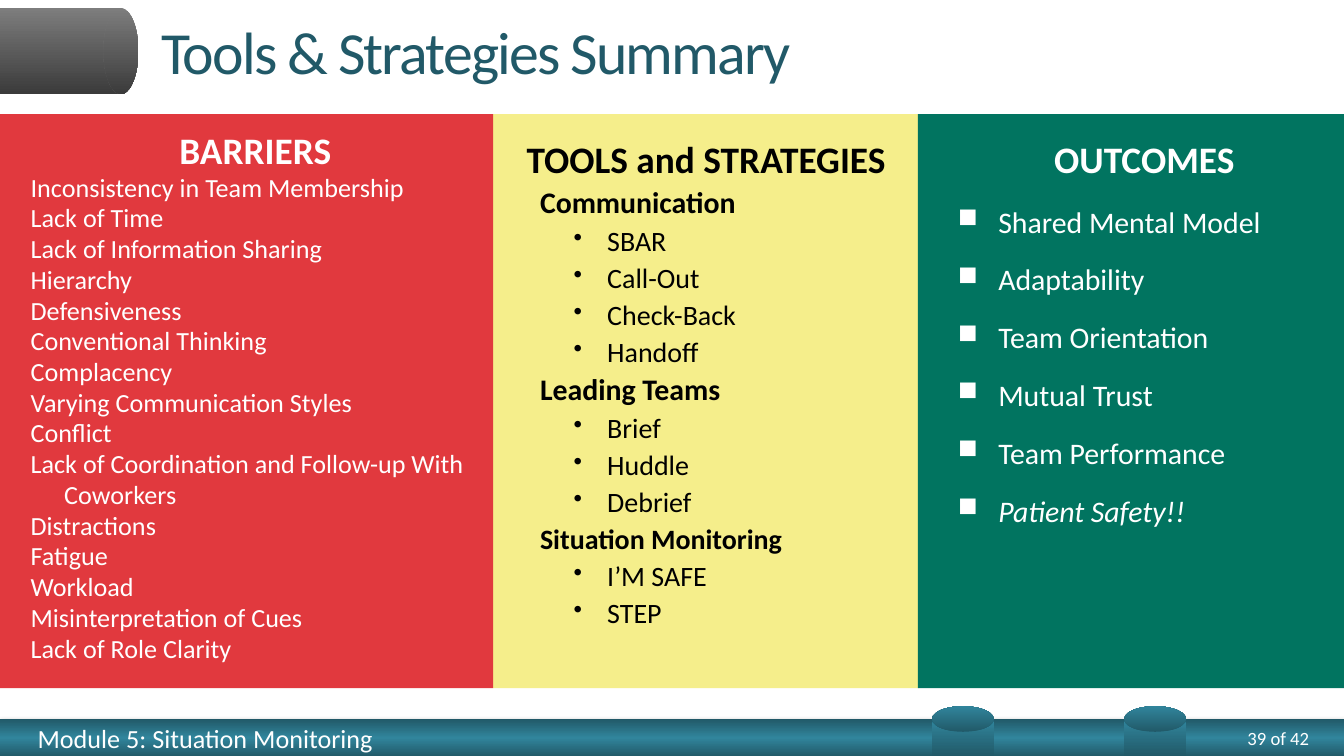
"""Build the Tools & Strategies Summary slide."""
from dataclasses import dataclass

from lxml.etree import SubElement
from pptx import Presentation
from pptx.dml.color import RGBColor
from pptx.enum.shapes import MSO_SHAPE
from pptx.enum.text import MSO_ANCHOR, PP_ALIGN
from pptx.oxml.ns import qn
from pptx.util import Inches, Pt


@dataclass(frozen=True)
class Theme:
    font: str = "Calibri"
    white: str = "FFFFFF"
    black: str = "000000"
    dark_teal: str = "215968"
    teal: str = "31859C"
    light_grey: str = "7D7D7D"
    dark_grey: str = "3B3B3B"
    red: str = "E1393E"
    yellow: str = "F5EE8B"
    green: str = "017460"
    title: int = 32
    heading: int = 20
    body: int = 16
    item: int = 15
    small: int = 14
    number: int = 10


def write(tf, text, size, color, font, bold=False, italic=False, align=PP_ALIGN.LEFT,
          margin=0, indent=0, leading=1.0, before=0, bullet=None, tracking=None):
    p = tf.paragraphs[0]
    if p.runs:
        p = tf.add_paragraph()
    p.alignment = align
    p.line_spacing = leading
    p.space_before = Pt(before)
    pPr = p._p.get_or_add_pPr()
    pPr.set("marL", str(Inches(margin)))
    pPr.set("indent", str(Inches(indent)))
    if bullet:
        SubElement(pPr, qn("a:buSzPct"), val="90000")
        SubElement(pPr, qn("a:buChar"), char=bullet)
    r = p.add_run()
    r.text = text
    r.font.name = font
    r.font.size = Pt(size)
    r.font.bold = bold
    r.font.italic = italic
    r.font.color.rgb = RGBColor.from_string(color)
    if tracking:
        r._r.get_or_add_rPr().set("spc", str(tracking))


class SlideBuilder:
    def __init__(self, slide, theme):
        self.s = slide
        self.theme = theme

    def shape(self, kind, box, rotation=0):
        sp = self.s.shapes.add_shape(kind, *map(Inches, box))
        sp.shadow.inherit = False
        sp.line.fill.background()
        sp.rotation = rotation
        return sp

    def gradient(self, kind, box, colors, angle, rotation=0):
        sp = self.shape(kind, box, rotation)
        sp.fill.gradient()
        sp.fill.gradient_angle = -angle % 360
        stops = sp._element.spPr.find(".//" + qn("a:gsLst"))
        stops.clear()
        for i, color in enumerate(colors):
            gs = SubElement(stops, qn("a:gs"), pos=str(100000 * i // (len(colors) - 1)))
            SubElement(gs, qn("a:srgbClr"), val=color)
        return sp

    def shadow(self, sp):
        effects = sp._element.spPr.find(qn("a:effectLst"))
        outer = SubElement(effects, qn("a:outerShdw"), blurRad=str(Pt(3.1)),
                           dist=str(Pt(1)), dir="5400000", rotWithShape="0")
        color = SubElement(outer, qn("a:srgbClr"), val=self.theme.black)
        SubElement(color, qn("a:alpha"), val="35000")

    def frame(self, sp, insets, anchor):
        tf = sp.text_frame
        tf.word_wrap = True
        tf.vertical_anchor = anchor
        tf.margin_left, tf.margin_top, tf.margin_right, tf.margin_bottom = map(Inches, insets)
        return tf

    def label(self, box, text, size, color, inset=0, **fmt):
        sp = self.s.shapes.add_textbox(*map(Inches, box))
        tf = self.frame(sp, (inset, inset / 2, inset, inset / 2), MSO_ANCHOR.MIDDLE)
        write(tf, text, size, color, self.theme.font, **fmt)

    def column(self, left, width, fill, color, top_inset, heading, rows, **heading_fmt):
        sp = self.shape(MSO_SHAPE.RECTANGLE, (left, 0.85, width, 4.27))
        sp.fill.solid()
        sp.fill.fore_color.rgb = RGBColor.from_string(fill)
        tf = self.frame(sp, (0.1, top_inset, 0.1, 0.05), MSO_ANCHOR.TOP)
        write(tf, heading, self.theme.heading, color, self.theme.font,
              bold=True, align=PP_ALIGN.CENTER, **heading_fmt)
        for text, fmt in rows:
            write(tf, text, color=color, font=self.theme.font, **fmt)


BARRIERS = [
    "Inconsistency in Team Membership", "Lack of Time", "Lack of Information Sharing",
    "Hierarchy", "Defensiveness", "Conventional Thinking", "Complacency",
    "Varying Communication Styles", "Conflict",
    "Lack of Coordination and Follow-up With Coworkers", "Distractions", "Fatigue",
    "Workload", "Misinterpretation of Cues", "Lack of Role Clarity",
]
TOOLS = [
    ("Communication", 16, ["SBAR", "Call-Out", "Check-Back", "Handoff"]),
    ("Leading Teams", 16, ["Brief", "Huddle", "Debrief"]),
    ("Situation Monitoring", 15, ["I’M SAFE", "STEP"]),
]
OUTCOMES = ["Shared Mental Model", "Adaptability", "Team Orientation", "Mutual Trust",
            "Team Performance", "Patient Safety!!"]


def main():
    t = Theme()
    prs = Presentation()
    prs.slide_width, prs.slide_height = Inches(10), Inches(5.625)
    b = SlideBuilder(prs.slides.add_slide(prs.slide_layouts[6]), t)

    footer = b.gradient(MSO_SHAPE.RECTANGLE, (0, 5.35, 10, 0.28),
                        [t.dark_teal, t.teal, t.dark_teal], 270)
    b.shadow(footer)
    b.label((0.28, 5.35, 5.36, 0.28), "Module 5: Situation Monitoring", t.small, t.white)
    b.label((8.93, 5.35, 0.81, 0.28), "39 of 42", t.number, t.white, align=PP_ALIGN.RIGHT)

    greys = [t.light_grey, t.dark_grey]
    b.gradient(MSO_SHAPE.RECTANGLE, (0, 0.06, 0.9, 0.64), greys, 90)
    b.gradient(MSO_SHAPE.OVAL, (0.77, 0.06, 0.26, 0.64), greys, 90)
    teals = [t.dark_teal, t.teal]
    for left in (7.03, 8.46):
        b.gradient(MSO_SHAPE.RECTANGLE, (left, 5.26, 0.27, 0.46), teals, 0, 270)
        b.gradient(MSO_SHAPE.OVAL, (left + 0.04, 5.12, 0.19, 0.46), teals, 0, 270)

    b.label((1.1, 0, 8.77, 0.75), "Tools & Strategies Summary", t.title, t.dark_teal,
            inset=0.1, tracking=-100)

    tight = dict(leading=0.9, before=3.6)
    tool_rows = []
    for group, size, items in TOOLS:
        tool_rows.append((group, dict(tight, size=size, bold=True, margin=0.25)))
        item_fmt = dict(tight, size=t.item, margin=0.75, indent=-0.25, bullet="•")
        tool_rows += [(item, item_fmt) for item in items]
    b.column(3.67, 3.17, t.yellow, t.black, 0.2, "TOOLS and STRATEGIES", tool_rows, leading=0.9)

    hanging = dict(margin=0.5, indent=-0.3)
    outcome_rows = [(text, dict(hanging, size=t.body, leading=1.3, before=6, bullet="■",
                                italic=text == OUTCOMES[-1])) for text in OUTCOMES]
    b.column(6.83, 3.17, t.green, t.white, 0.2, "OUTCOMES", outcome_rows, leading=0.9, **hanging)

    hanging = dict(margin=0.38, indent=-0.25)
    barrier_rows = [(text, dict(hanging, size=t.small, leading=0.98)) for text in BARRIERS]
    b.column(0, 3.67, t.red, t.white, 0.1, "BARRIERS", barrier_rows, **hanging)

    prs.save("out.pptx")


if __name__ == "__main__":
    main()
